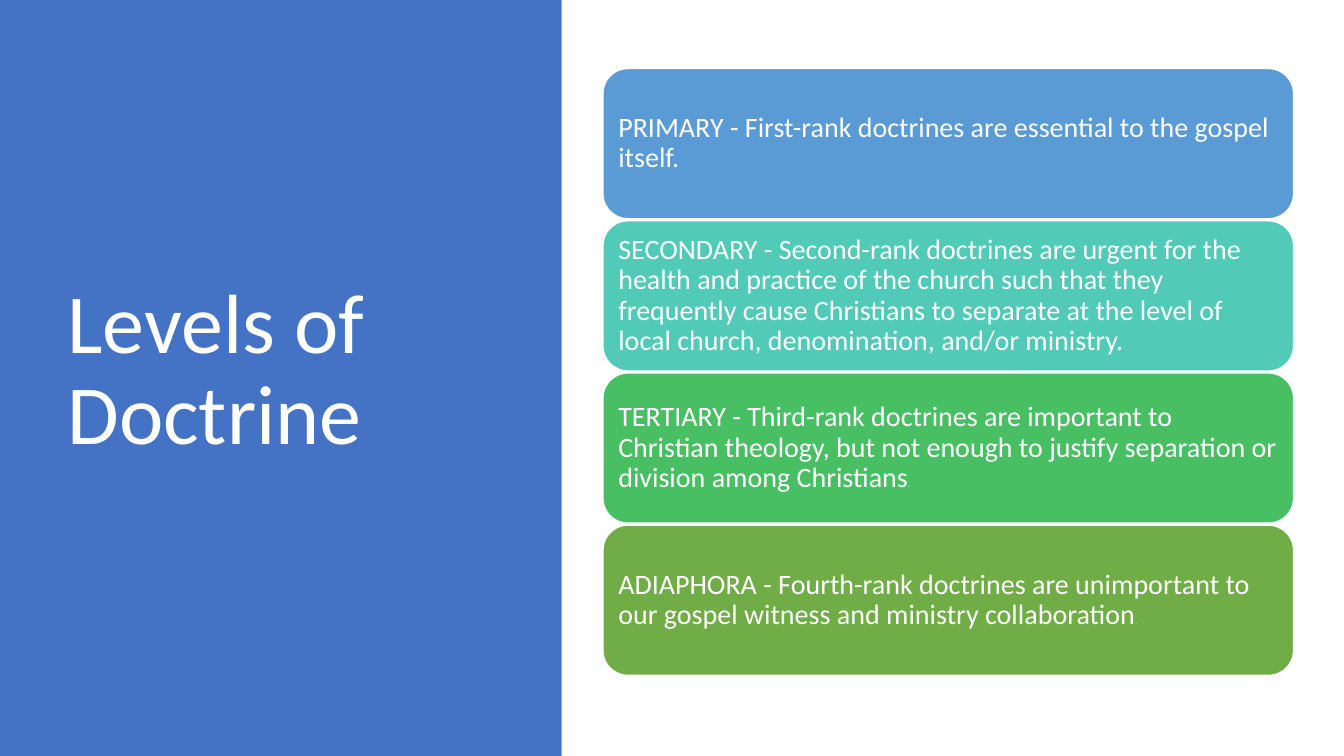
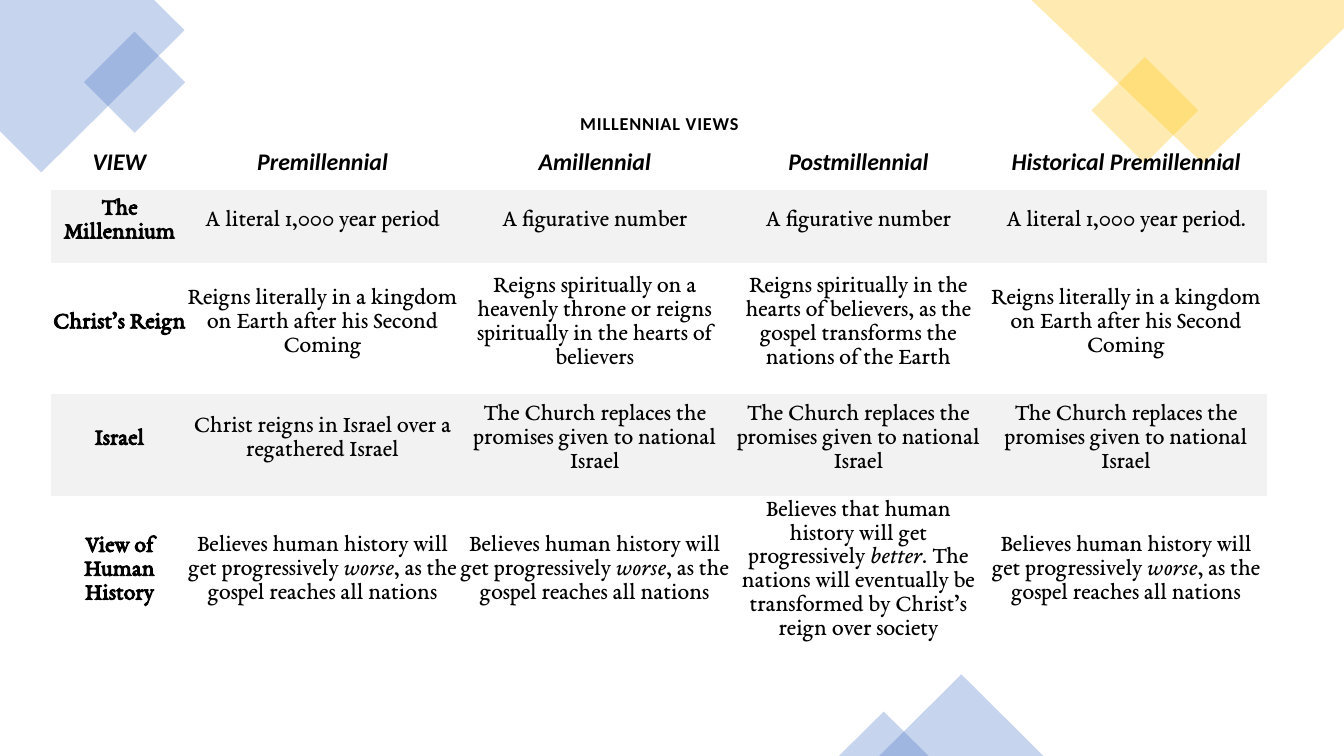
from dataclasses import dataclass

from lxml.etree import SubElement
from pptx import Presentation
from pptx.dml.color import RGBColor
from pptx.enum.shapes import MSO_SHAPE as Preset
from pptx.enum.text import MSO_ANCHOR as Anchor, MSO_AUTO_SIZE as AutoSize, PP_ALIGN as Align
from pptx.oxml.ns import qn
from pptx.util import Inches, Pt

TITLE_ONLY, BLANK = 5, 6
NO_GRID_STYLE = "{2D5ABB26-0587-4C30-8999-92F81FD0307C}"


@dataclass(frozen=True)
class Theme:
    sans: str = "Calibri"
    serif: str = "EB Garamond"
    white: str = "FFFFFF"
    black: str = "000000"
    blue: str = "4472C4"
    gold: str = "FFC000"
    band: str = "F2F2F2"
    levels: tuple = ("5B9BD5", "52CAB8", "49BF64", "70AD47")
    title_size: int = 60
    card_size: int = 20
    table_size: int = 17
    caption_size: int = 13
    fine_size: int = 5
    opacity: int = 30


class Deck:
    def __init__(self, theme):
        self.theme = theme
        self.prs = Presentation()
        self.prs.slide_width, self.prs.slide_height = Inches(13.33), Inches(7.5)
        self.slide = None

    def add_slide(self, layout):
        self.slide = self.prs.slides.add_slide(self.prs.slide_layouts[layout])

    def set_text(self, frame, text, size, color, align=Align.LEFT, face=None,
                 bold=False, italic=False, line_spacing=1.0, accent_size=None):
        """Fill the frame; pieces between asterisks are italic, or of accent_size if given."""
        paragraph = frame.paragraphs[0]
        paragraph.alignment, paragraph.line_spacing = align, line_spacing
        font = paragraph.font
        font.name, font.size = face or self.theme.sans, Pt(size)
        font.bold, font.italic = bold, italic
        font.color.rgb = RGBColor.from_string(color)
        for index, piece in enumerate(text.split("*")):
            if not piece:
                continue
            run = paragraph.add_run()
            run.text = piece
            if index % 2 and accent_size:
                run.font.size = Pt(accent_size)
            elif index % 2:
                run.font.italic = True

    def paint(self, shape, color, opacity=100):
        shape.shadow.inherit = False
        shape.fill.solid()
        shape.fill.fore_color.rgb = RGBColor.from_string(color)
        shape.line.fill.background()
        if opacity < 100:
            tint = next(shape.element.spPr.iter(qn("a:srgbClr")))
            SubElement(tint, qn("a:alpha"), val=str(opacity * 1000))
        return shape

    def block(self, preset, box, color, opacity=100):
        shape = self.slide.shapes.add_shape(preset, *map(Inches, box))
        return self.paint(shape, color, opacity)

    def outline(self, points, color):
        corners = [(Inches(x), Inches(y)) for x, y in points]
        builder = self.slide.shapes.build_freeform(*corners[0])
        builder.add_line_segments(corners[1:], close=True)
        self.paint(builder.convert_to_shape(), color, self.theme.opacity)

    def title_panel(self, text, panel_box, title_box):
        title = self.slide.shapes.title
        panel = self.block(Preset.RECTANGLE, panel_box, self.theme.blue)
        title.element.addprevious(panel.element)
        title.left, title.top, title.width, title.height = map(Inches, title_box)
        frame = title.text_frame
        frame.auto_size, frame.word_wrap = AutoSize.NONE, True
        frame.vertical_anchor = Anchor.MIDDLE
        self.set_text(frame, text, self.theme.title_size, self.theme.white, line_spacing=0.9)

    def card(self, text, box, color):
        theme = self.theme
        card = self.block(Preset.ROUNDED_RECTANGLE, box, color)
        card.line.color.rgb = RGBColor.from_string(theme.white)
        card.line.width = Pt(1)
        frame = card.text_frame
        frame.word_wrap, frame.vertical_anchor = True, Anchor.MIDDLE
        frame.margin_left = frame.margin_right = Inches(0.08)
        frame.margin_top = frame.margin_bottom = Inches(0.08)
        self.set_text(frame, text, theme.card_size, theme.white, line_spacing=0.9,
                      accent_size=theme.fine_size)

    def comparison(self, caption, rows, corner, widths, heights):
        """Table with a merged caption row, a header row and banded body rows."""
        theme = self.theme
        holder = self.slide.shapes.add_table(
            len(heights), len(widths), *map(Inches, (*corner, sum(widths), sum(heights))))
        next(holder.element.iter(qn("a:tableStyleId"))).text = NO_GRID_STYLE
        table = holder.table
        table.first_row = table.horz_banding = False
        for column, width in zip(table.columns, widths):
            column.width = Inches(width)
        for row, height in zip(table.rows, heights):
            row.height = Inches(height)

        top = table.cell(0, 0)
        top.merge(table.cell(0, len(widths) - 1))
        self.fill_cell(top, caption, Anchor.BOTTOM, margin_top=0.11,
                       size=theme.caption_size, bold=True)
        next(holder.element.iter(qn("a:defRPr"))).set("spc", "60")
        for r, texts in enumerate(rows, start=1):
            header = r == 1
            for c, text in enumerate(texts):
                self.fill_cell(table.cell(r, c), text, Anchor.MIDDLE,
                               color=None if r % 2 else theme.band,
                               size=theme.table_size, bold=header or c == 0, italic=header,
                               face=theme.sans if header else theme.serif)

    def fill_cell(self, cell, text, anchor, color=None, margin_top=0, **style):
        cell.vertical_anchor = anchor
        cell.margin_left = cell.margin_right = 0
        cell.margin_top, cell.margin_bottom = Inches(margin_top), Inches(0.11)
        if color:
            cell.fill.solid()
            cell.fill.fore_color.rgb = RGBColor.from_string(color)
        else:
            cell.fill.background()
        self.set_text(cell.text_frame, text, color=self.theme.black, align=Align.CENTER, **style)


LEVELS = (
    "PRIMARY - First-rank doctrines are essential to the gospel itself.",
    "SECONDARY - Second-rank doctrines are urgent for the health and practice of the church "
    "such that they frequently cause Christians to separate at the level of local church, "
    "denomination, and/or ministry.",
    "TERTIARY - Third-rank doctrines are important to Christian theology, but not enough to "
    "justify separation or division among Christians*.*",
    "ADIAPHORA - Fourth-rank doctrines are unimportant to our gospel witness and ministry "
    "collaboration*.*",
)

LITERAL_REIGN = "Reigns literally in a kingdom on Earth after his Second Coming"
CHURCH_REPLACES = "The Church replaces the promises given to national Israel"
GETS_WORSE = ("Believes human history will get progressively *worse*, "
              "as the gospel reaches all nations")
VIEWS = (
    ("VIEW", "Premillennial", "Amillennial", "Postmillennial", "Historical Premillennial"),
    ("The Millennium", "A literal 1,000 year period", "A figurative number",
     "A figurative number", "A literal 1,000 year period."),
    ("Christ’s Reign", LITERAL_REIGN,
     "Reigns spiritually on a heavenly throne or reigns spiritually in the hearts of believers",
     "Reigns spiritually in the hearts of believers, as the gospel transforms the nations "
     "of the Earth",
     LITERAL_REIGN),
    ("Israel", "Christ reigns in Israel over a regathered Israel",
     CHURCH_REPLACES, CHURCH_REPLACES, CHURCH_REPLACES),
    ("View of Human History", GETS_WORSE, GETS_WORSE,
     "Believes that human history will get progressively *better*. The nations will "
     "eventually be transformed by Christ’s reign over society",
     GETS_WORSE),
)


def doctrine_slide(deck):
    deck.add_slide(TITLE_ONLY)
    deck.title_panel("Levels of Doctrine", (0, 0, 5.57, 7.5), (0.57, 0.68, 4.16, 6.02))
    for index, (text, color) in enumerate(zip(LEVELS, deck.theme.levels)):
        deck.card(text, (5.98, 0.68 + index * 1.51, 6.85, 1.49), color)


def millennium_slide(deck):
    theme = deck.theme
    deck.add_slide(BLANK)
    deck.outline([(1.53, 0), (0, 0), (0, 1.3), (0.41, 1.71), (1.83, 0.3)], theme.blue)
    for box, color in (((0.98, 0.46, 0.71, 0.71), theme.blue),
                       ((10.98, 0.72, 0.75, 0.75), theme.gold)):
        deck.block(Preset.RECTANGLE, box, color, theme.opacity).rotation = 315
    deck.outline([(13.33, 0), (10.23, 0), (11.93, 1.62), (13.33, 0.28)], theme.gold)
    for box in ((8.72, 6.69, 1.63, 0.81), (8.32, 7.06, 0.89, 0.44)):
        deck.block(Preset.ISOSCELES_TRIANGLE, box, theme.blue, theme.opacity)
    deck.comparison("MILLENNIAL VIEWS", VIEWS, corner=(0.51, 0.98),
                    widths=(1.35, 2.68, 2.72, 2.51, 2.8),
                    heights=(0.47, 0.44, 0.72, 1.3, 1.01, 1.59))


def main():
    deck = Deck(Theme())
    doctrine_slide(deck)
    millennium_slide(deck)
    deck.prs.save("out.pptx")


if __name__ == "__main__":
    main()
